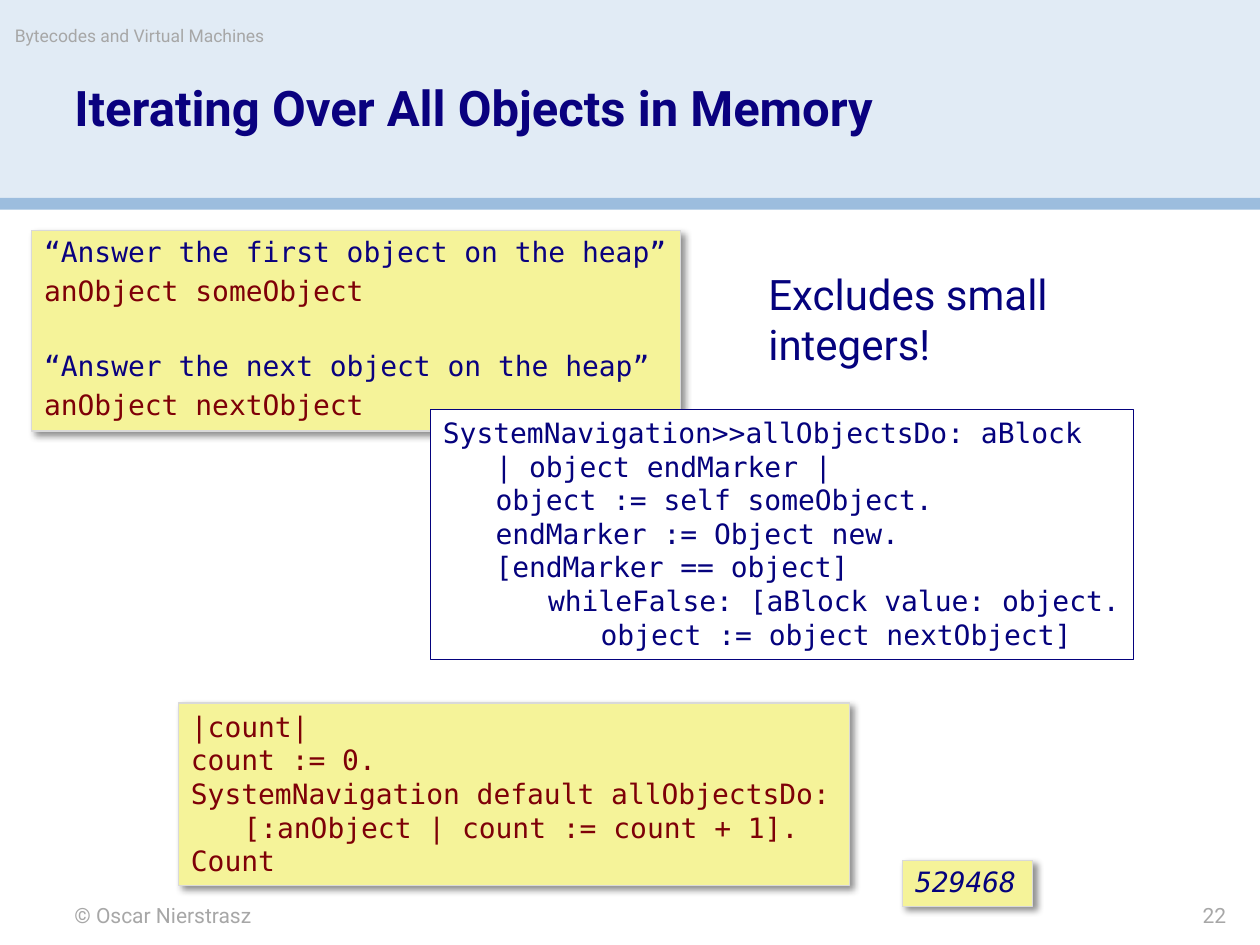
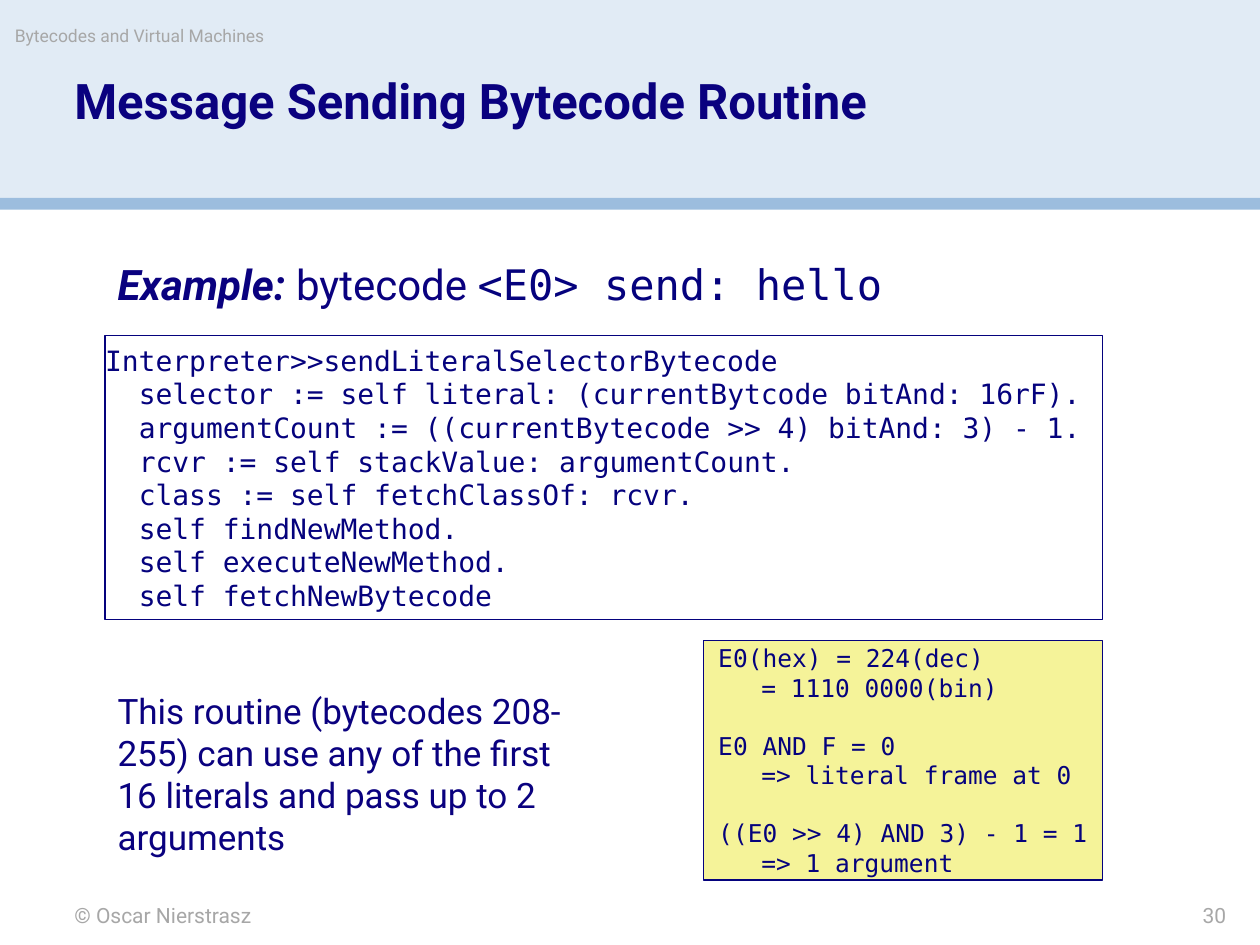
"""Build two slides on walking the object heap and on sending messages."""
from lxml.etree import SubElement as Sub
from pptx import Presentation
from pptx.dml.color import RGBColor
from pptx.enum.shapes import MSO_SHAPE as Kind
from pptx.enum.text import MSO_ANCHOR as Anchor, PP_ALIGN as Align
from pptx.oxml.ns import qn
from pptx.util import Cm, Pt

MONO, SANS = "DejaVu Sans Mono", "Roboto"
NAVY, INK, RED, GRAY = "0A017F", "05027D", "7E0007", "A7A7A7"
PALE, BLUE, CREAM, WHITE, EDGE = "E1EBF5", "9CBDDE", "F5F399", "FFFFFF", "D9D9D9"
STEP, TAB, PAIR, LEAD = 1.06, 1.17, 0.68, 0.3


def rgb(code):
    return RGBColor.from_string(code)


def box(page, at, lines=(), size=16, font=MONO, ink=INK, fill=None, edge=None,
        pad=True, mid=False, shade=False):
    """Draw a box; each line is (text, indent in cm, space before in pt, colour)."""
    spot = [Cm(n) for n in at]
    if fill:
        shape = page.shapes.add_shape(Kind.RECTANGLE, *spot)
        shape.shadow.inherit = False
        shape.fill.solid()
        shape.fill.fore_color.rgb = rgb(fill)
        if edge:
            shape.line.color.rgb = rgb(edge)
            shape.line.width = Pt(0.75)
        else:
            shape.line.fill.background()
    else:
        shape = page.shapes.add_textbox(*spot)
    if shade:
        effects = shape.element.spPr.find(qn("a:effectLst"))
        cast = Sub(effects, qn("a:outerShdw"), blurRad=str(Pt(4)), dist=str(Pt(3)),
                   dir="2700000", algn="tl", rotWithShape="0")
        tint = Sub(cast, qn("a:srgbClr"), val="000000")
        Sub(tint, qn("a:alpha"), val="43000")
    frame = shape.text_frame
    frame.word_wrap = True
    frame.vertical_anchor = Anchor.MIDDLE if mid else Anchor.TOP
    frame.margin_left = Cm(0.25 if pad else 0)
    frame.margin_top = frame.margin_bottom = Cm(0.13 if pad else 0)
    frame.margin_right = 0
    for i, line in enumerate(lines):
        text, dent, gap, hue = (*line, *(0, 0, ink)[len(line) - 1:])
        para = frame.paragraphs[0] if i == 0 else frame.add_paragraph()
        para.alignment = Align.LEFT
        para.space_before = Pt(gap)
        if dent:
            props = para._p.get_or_add_pPr()
            props.set("marL", str(Cm(dent)))
            props.set("indent", "0")
        run = para.add_run()
        run.text = text
        run.font.name, run.font.size = font, Pt(size)
        run.font.color.rgb = rgb(hue)
    return frame


deck = Presentation()
deck.slide_width, deck.slide_height = Cm(25.4), Cm(19.05)
pages = []
for title, top, number in [("Iterating Over All Objects in Memory", 1.7, "22"),
                           ("Message Sending Bytecode Routine", 1.55, "30")]:
    page = deck.slides.add_slide(deck.slide_layouts[6])
    box(page, (0, 0, 25.4, 4.01), fill=PALE)
    box(page, (0, 3.99, 25.4, 0.24), fill=BLUE)
    head = box(page, (1.5, top, 22.43, 2.26), [(title,)], 28, SANS, NAVY, pad=False)
    head.paragraphs[0].line_spacing = 0.9
    head.paragraphs[0].runs[0].font.bold = True
    for text, at, size in [("© Oscar Nierstrasz", (1.5, 18.19, 10.6, 0.5), 12),
                           ("Bytecodes and Virtual Machines", (0.3, 0.5, 15, 0.7), 10),
                           (number, (20.96, 18.2, 3.76, 0.5), 12)]:
        foot = box(page, at, [(text,)], size, SANS, GRAY, pad=False)
    foot.paragraphs[0].alignment = Align.RIGHT
    pages.append(page)
heap, send = pages

heads = box(heap, (0.64, 4.65, 13.08, 4.04), [
    ("“Answer the first object on the heap”", 0, 3.7, NAVY),
    ("anObject someObject", 0, 3.7),
    ("“Answer the next object on the heap”", 0, 25.1, NAVY),
    ("anObject nextObject", 0, 3.7),
], ink=RED, fill=CREAM, edge=EDGE, shade=True)
box(heap, (15.24, 5.28, 6.73, 2.29), [("Excludes small integers!",)], 24, SANS)
box(heap, (3.6, 14.17, 13.52, 3.68), [
    ("|count|",),
    ("count := 0.",),
    ("SystemNavigation default allObjectsDo:",),
    ("[:anObject | count := count + 1].", STEP),
    ("Count",),
], ink=RED, fill=CREAM, edge=EDGE, shade=True)
total = box(heap, (18.2, 17.35, 2.62, 0.92), [("529468", 0, 3.7)],
            fill=CREAM, edge=EDGE, shade=True)
total.paragraphs[0].runs[0].font.italic = True
for para in (*heads.paragraphs, *total.paragraphs):
    para.line_spacing = 0.95
box(heap, (8.68, 8.25, 14.17, 5.04), [
    ("SystemNavigation>>allObjectsDo: aBlock",),
    ("| object endMarker |", STEP),
    ("object := self someObject.", STEP),
    ("endMarker := Object new.", STEP),
    ("[endMarker == object]", STEP),
    ("whileFalse: [aBlock value: object.", 2 * STEP),
    ("object := object nextObject]", 3 * STEP),
], fill=WHITE, edge=INK)

box(send, (2.12, 6.77, 20.11, 5.72), [
    ("Interpreter>>sendLiteralSelectorBytecode",),
    ("selector := self literal: (currentBytcode bitAnd: 16rF).", PAIR),
    ("argumentCount := ((currentBytecode >> 4) bitAnd: 3) - 1.", PAIR),
    ("rcvr := self stackValue: argumentCount.", PAIR),
    ("class := self fetchClassOf: rcvr.", PAIR),
    ("self findNewMethod.", PAIR),
    ("self executeNewMethod.", PAIR),
    ("self fetchNewBytecode", PAIR),
], fill=WHITE, edge=INK, pad=False, mid=True)
lead = box(send, (2.12, 5.08, 18, 1.27)).paragraphs[0]
for text, font, hue, bold in [("Example: ", SANS, NAVY, True),
                              ("bytecode ", SANS, NAVY, False),
                              ("<E0> send: hello", MONO, INK, False)]:
    run = lead.add_run()
    run.text = text
    run.font.name, run.font.size = font, Pt(24)
    run.font.bold = run.font.italic = bold
    run.font.color.rgb = rgb(hue)
box(send, (2.12, 13.76, 9.9, 3.68), [
    ("This routine (bytecodes 208-255) can use any of the first "
     "16 literals and pass up to 2 arguments",),
], 20, SANS, NAVY)
box(send, (14.18, 12.91, 8.05, 4.83), [
    ("E0(hex) = 224(dec)", LEAD),
    ("= 1110 0000(bin)", TAB),
    ("E0 AND F = 0", LEAD, 16.3),
    ("=> literal frame at 0", TAB),
    ("((E0 >> 4) AND 3) - 1 = 1", LEAD, 16.3),
    ("=> 1 argument", TAB),
], 14, fill=CREAM, edge=INK, pad=False, mid=True)

deck.save("out.pptx")
